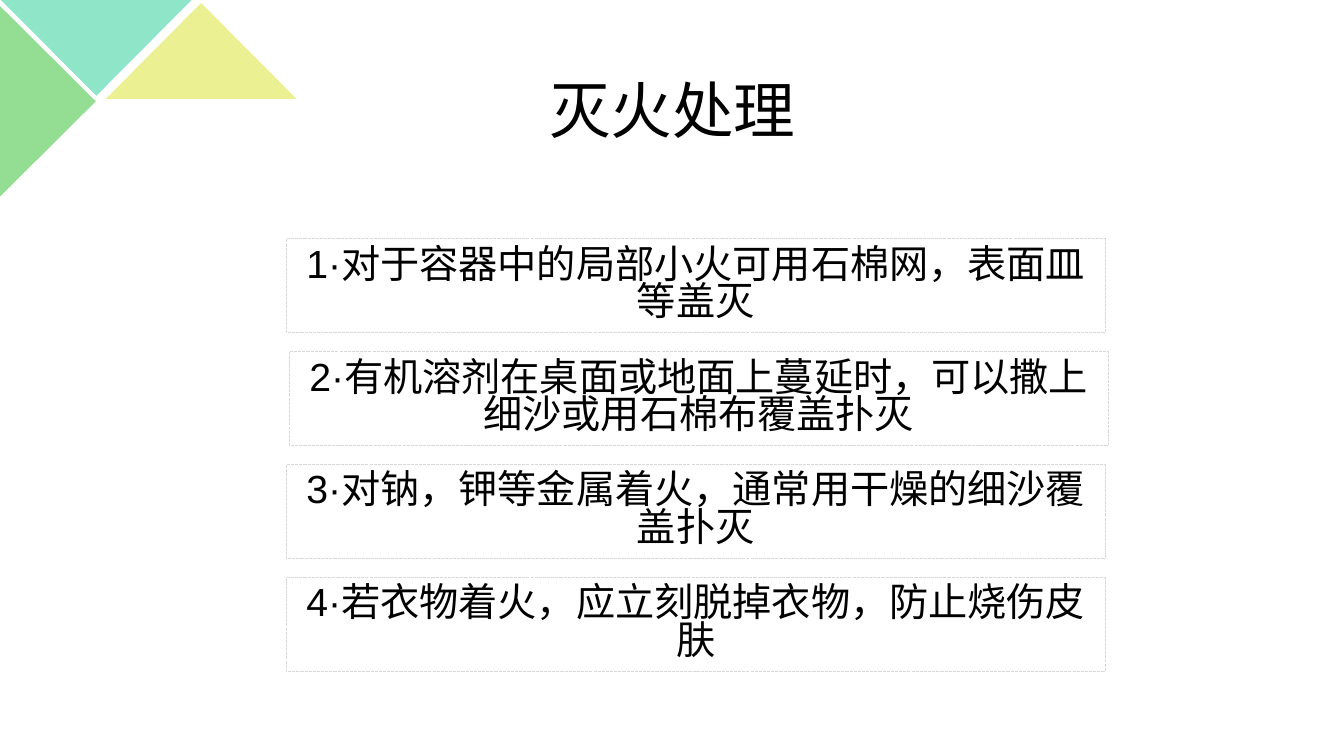
import pptx
import pptx.util
import pptx.dml.color
import pptx.enum.dml
import pptx.enum.shapes
import pptx.enum.text
from pptx.util import Inches

TITLE = "灭火处理"
STEPS = [
    "1·对于容器中的局部小火可用石棉网，表面皿等盖灭",
    "2·有机溶剂在桌面或地面上蔓延时，可以撒上细沙或用石棉布覆盖扑灭",
    "3·对钠，钾等金属着火，通常用干燥的细沙覆盖扑灭",
    "4·若衣物着火，应立刻脱掉衣物，防止烧伤皮肤",
]
STEP_LEFTS = [2.84, 2.87, 2.84, 2.84]
STEP_TOP, STEP_PITCH = 2.37, 1.12
STEP_WIDTH, STEP_HEIGHT = 8.12, 0.93

THEME = {
    "font": "Arial",
    "text": "000000",
    "border": "D9D9D9",
    "green": "94DE94",
    "teal": "8EE5C7",
    "yellow": "EBF092",
    "title_size": 44,
    "step_size": 28,
}

# left, top, rotation, colour
CORNER_TRIANGLES = [
    (-0.47, 0.53, 90, "green"),
    (0.01, 0, 180, "teal"),
    (1.05, 0.03, 0, "yellow"),
]
TRIANGLE_WIDTH, TRIANGLE_HEIGHT = 1.89, 0.95


def theme_color(name):
    return pptx.dml.color.RGBColor.from_string(THEME[name])


def write_text(shape, text, *, size, line_spacing, space_before=0):
    frame = shape.text_frame
    frame.word_wrap = True
    frame.vertical_anchor = pptx.enum.text.MSO_ANCHOR.MIDDLE
    paragraph = frame.paragraphs[0]
    paragraph.alignment = pptx.enum.text.PP_ALIGN.CENTER
    paragraph.line_spacing = line_spacing
    paragraph.space_before = pptx.util.Pt(space_before)
    run = paragraph.add_run()
    run.text = text
    run.font.name = THEME["font"]
    run.font.size = pptx.util.Pt(THEME[size])
    run.font.color.rgb = theme_color("text")


def add_triangle(slide, left, top, rotation, color):
    triangle = slide.shapes.add_shape(
        pptx.enum.shapes.MSO_SHAPE.ISOSCELES_TRIANGLE,
        Inches(left), Inches(top), Inches(TRIANGLE_WIDTH), Inches(TRIANGLE_HEIGHT))
    triangle.shadow.inherit = False
    triangle.rotation = rotation
    triangle.fill.solid()
    triangle.fill.fore_color.rgb = theme_color(color)
    triangle.line.fill.background()


def add_step(slide, left, top, text):
    box = slide.shapes.add_shape(
        pptx.enum.shapes.MSO_SHAPE.RECTANGLE,
        Inches(left), Inches(top), Inches(STEP_WIDTH), Inches(STEP_HEIGHT))
    box.shadow.inherit = False
    box.fill.background()
    box.line.color.rgb = theme_color("border")
    box.line.width = pptx.util.Pt(0.75)
    box.line.dash_style = pptx.enum.dml.MSO_LINE.SQUARE_DOT
    write_text(box, text, size="step_size", line_spacing=0.8, space_before=10)


def main():
    presentation = pptx.Presentation()
    presentation.slide_width = Inches(13.33)
    presentation.slide_height = Inches(7.5)
    slide = presentation.slides.add_slide(presentation.slide_layouts[6])

    for triangle in CORNER_TRIANGLES:
        add_triangle(slide, *triangle)

    title = slide.shapes.add_textbox(Inches(0.92), Inches(0.4), Inches(11.5), Inches(1.45))
    write_text(title, TITLE, size="title_size", line_spacing=0.9)

    for index, (left, text) in enumerate(zip(STEP_LEFTS, STEPS)):
        add_step(slide, left, STEP_TOP + index * STEP_PITCH, text)

    presentation.save("out.pptx")


if __name__ == "__main__":
    main()
